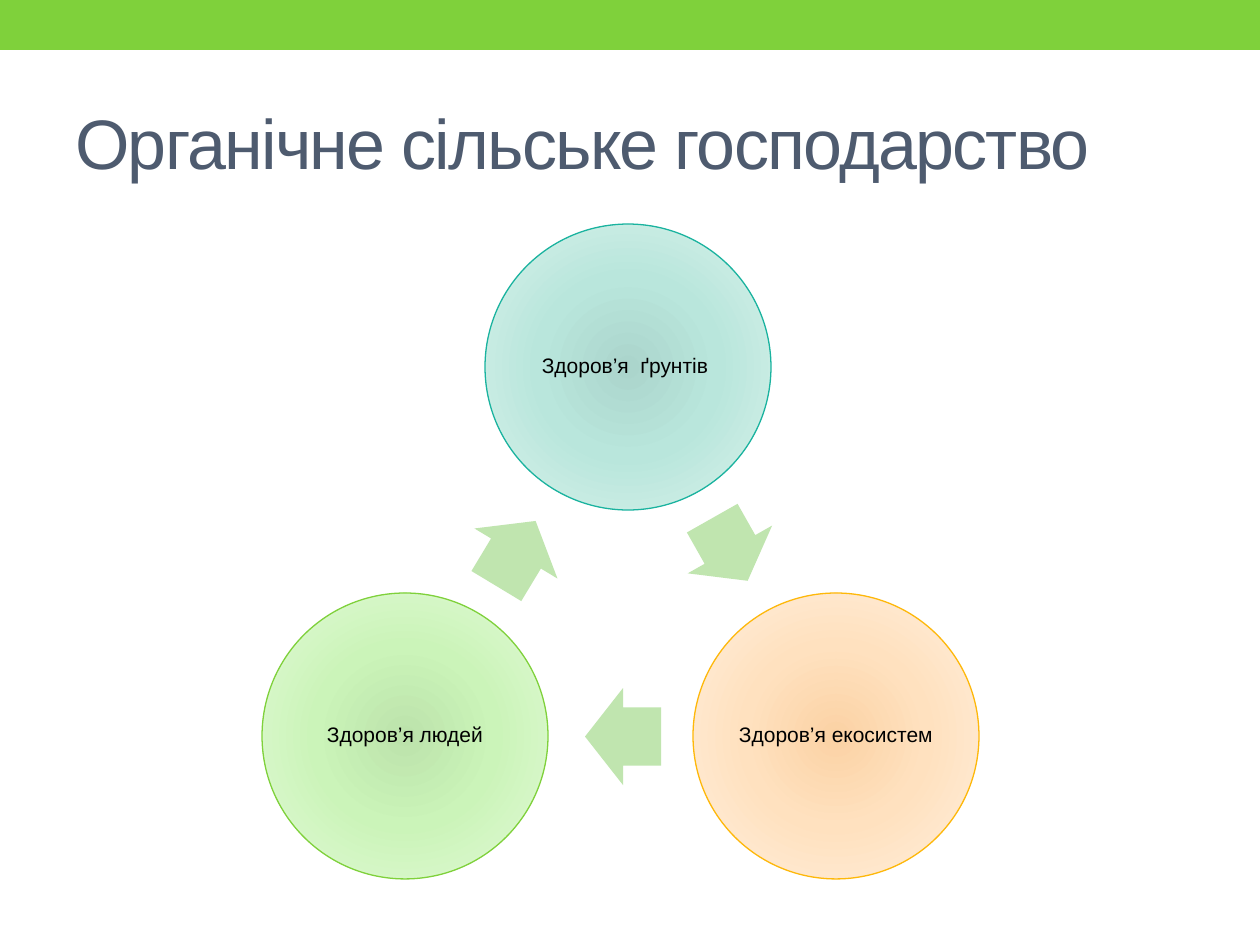
import pptx
import pptx.dml.color
import pptx.enum.shapes
import pptx.enum.text
import pptx.oxml
import pptx.oxml.ns
import pptx.util

PX = 914400 / 126
SHAPE = pptx.enum.shapes.MSO_SHAPE
ALIGN = pptx.enum.text.PP_ALIGN
MIDDLE = pptx.enum.text.MSO_ANCHOR.MIDDLE

COLORS = {
    "bar": "7FD13B", "title": "4E5B6F", "text": "000000", "arrow": "C0E5AF",
    "soil": ("ABD5CC", "B9E6DC", "D9F2EC"), "soil_line": "1AB39F",
    "eco": ("FBD2A4", "FFE1BF", "FFEEDD"), "eco_line": "FEB80A",
    "people": ("BCE3AB", "CBF4B9", "E2FAD8"), "people_line": "7FD13B",
}
DIAMETER = 286
# text, colour key, left and top within the cycle
CIRCLES = [
    ("Здоров’я  ґрунтів ", "soil", 223, 0),
    ("Здоров’я екосистем", "eco", 431, 369),
    ("Здоров’я людей", "people", 0, 369),
]
# left, top, width, height within the cycle, and rotation
ARROWS = [
    (432, 277, 72, 97, 60.5),
    (323, 464, 76, 97, 180),
    (216, 281, 76, 97, 301.1),
]


def px(*lengths):
    return [pptx.util.Emu(round(n * PX)) for n in lengths]


def rgb(key):
    return pptx.dml.color.RGBColor.from_string(COLORS[key])


def set_all(obj, values):
    for name, value in values.items():
        setattr(obj, name, value)


def write(sp, text, size, color, align):
    tf = sp.text_frame
    set_all(tf, {"word_wrap": True, "vertical_anchor": MIDDLE})
    p = tf.paragraphs[0]
    p.alignment = align
    r = p.add_run()
    r.text = text
    set_all(r.font, {"name": "Arial", "size": pptx.util.Pt(size)})
    r.font.color.rgb = rgb(color)
    return tf, p, r


def add_flat(slide, kind, box, color):
    sp = slide.shapes.add_shape(kind, *px(*box))
    sp.shadow.inherit = False
    sp.fill.solid()
    sp.fill.fore_color.rgb = rgb(color)
    sp.line.fill.background()
    return sp


def radial_fill(sp, colors):
    """Replace the solid fill by a gradient from the centre outwards."""
    stops = "".join(
        f'<a:gs pos="{pos}"><a:srgbClr val="{c}"/></a:gs>'
        for pos, c in zip((0, 45000, 100000), colors))
    grad = pptx.oxml.parse_xml(
        f'<a:gradFill {pptx.oxml.ns.nsdecls("a")} rotWithShape="1">'
        f'<a:gsLst>{stops}</a:gsLst><a:path path="circle">'
        '<a:fillToRect l="50000" t="50000" r="50000" b="50000"/>'
        '</a:path></a:gradFill>')
    spPr = sp.element.spPr
    spPr.replace(spPr.find(pptx.oxml.ns.qn("a:solidFill")), grad)


def add_title(slide, box, text):
    sp = slide.shapes.add_textbox(*px(*box))
    tf, p, r = write(sp, text, 40, "title", ALIGN.LEFT)
    r.font._element.set("spc", "-100")


def add_circle(slide, box, text, key):
    sp = add_flat(slide, SHAPE.OVAL, box, "arrow")
    radial_fill(sp, COLORS[key])
    sp.line.color.rgb = rgb(key + "_line")
    sp.line.width = pptx.util.Pt(0.75)
    tf, p, r = write(sp, text, 12, "text", ALIGN.CENTER)
    inset = pptx.util.Inches(0.02)
    set_all(tf, {f"margin_{side}": inset
                 for side in ("left", "top", "right", "bottom")})
    p.line_spacing = 0.9


def add_cycle(slide, left, top):
    for (text, key, x, y), (ax, ay, w, h, angle) in zip(CIRCLES, ARROWS):
        add_circle(slide, (left + x, top + y, DIAMETER, DIAMETER), text, key)
        arrow = add_flat(slide, SHAPE.RIGHT_ARROW,
                         (left + ax, top + ay, w, h), "arrow")
        arrow.rotation = angle
        arrow.adjustments[0] = 0.6
        arrow.adjustments[1] = 0.5


def main():
    prs = pptx.Presentation()
    prs.slide_width, prs.slide_height = px(1260, 945)
    slide = prs.slides.add_slide(prs.slide_layouts[6])
    add_flat(slide, SHAPE.RECTANGLE, (0, 0, 1260, 50), "bar")
    add_title(slide, (63, 73, 1134, 136), "Органічне сільське господарство")
    add_cycle(slide, 262, 224)
    prs.save("out.pptx")


if __name__ == "__main__":
    main()
